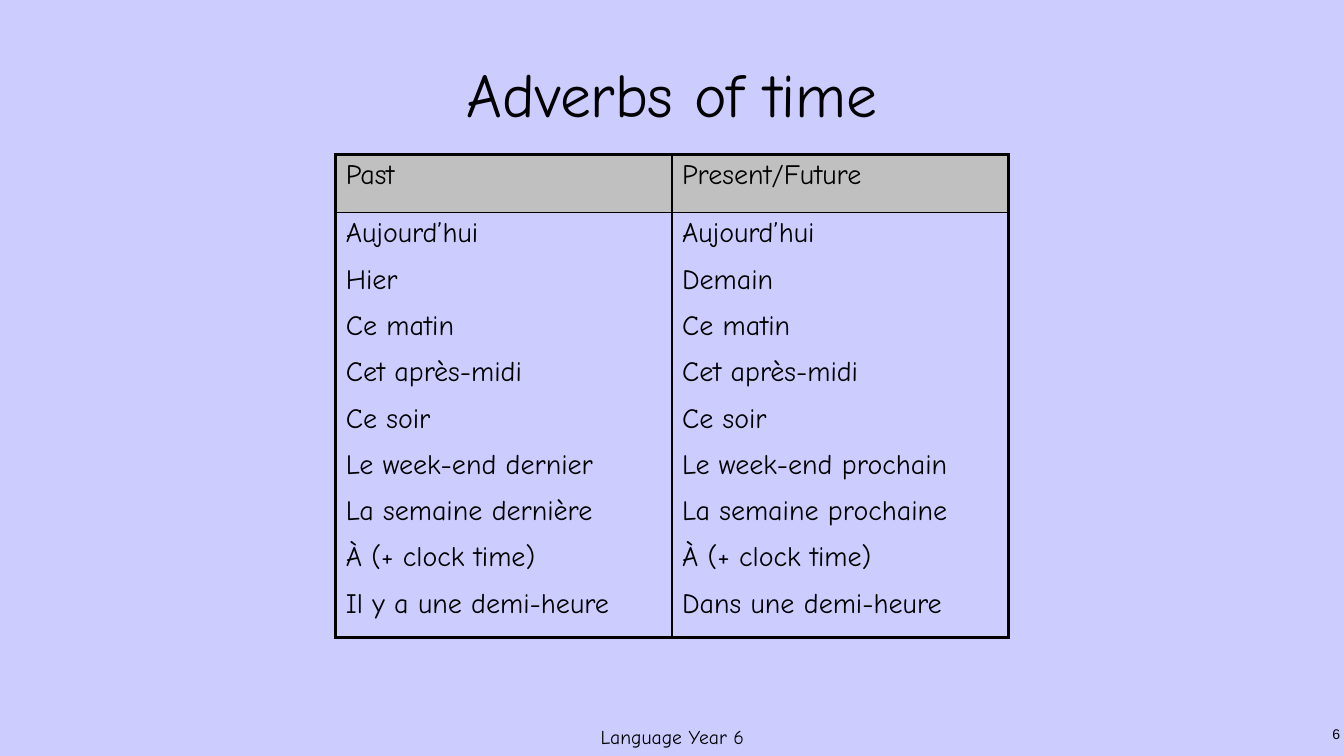
from pptx import Presentation
from pptx.dml.color import RGBColor
from pptx.enum.text import MSO_ANCHOR, PP_ALIGN
from pptx.oxml import parse_xml
from pptx.oxml.ns import nsdecls
from pptx.util import Inches, Pt

INK, HEADER_FILL, BACKGROUND = "000000", "C0C0C0", "CCCCFF"
BODY_FONT = "Comic Neue"
OUTER, INNER = 2.25, 1

ADVERBS = {
    "Past": [
        "Aujourd’hui", "Hier", "Ce matin", "Cet après-midi", "Ce soir",
        "Le week-end dernier", "La semaine dernière", "À (+ clock time)",
        "Il y a une demi-heure",
    ],
    "Present/Future": [
        "Aujourd’hui", "Demain", "Ce matin", "Cet après-midi", "Ce soir",
        "Le week-end prochain", "La semaine prochaine", "À (+ clock time)",
        "Dans une demi-heure",
    ],
}


def color(hex_string):
    return RGBColor.from_string(hex_string)


def style(p, size, font=BODY_FONT):
    for r in p.runs:
        r.font.size = Pt(size)
        r.font.name = font
        r.font.color.rgb = color(INK)


def add_text(s, box, text, size, align, anchor, font=BODY_FONT):
    tf = s.shapes.add_textbox(*map(Inches, box)).text_frame
    tf.word_wrap = True
    tf.vertical_anchor = anchor
    p = tf.paragraphs[0]
    p.text = text
    p.alignment = align
    style(p, size, font)
    return tf


def set_borders(cell, widths):
    """Draw the left, right, top and bottom borders, widths in points."""
    tcPr = cell._tc.get_or_add_tcPr()
    for i, (side, width) in enumerate(zip("LRTB", widths)):
        tcPr.insert(i, parse_xml(
            f'<a:ln{side} {nsdecls("a")} w="{Pt(width)}"><a:solidFill>'
            f'<a:srgbClr val="{INK}"/></a:solidFill></a:ln{side}>'))


def fill_cell(cell, lines):
    tf = cell.text_frame
    tf.text = "\n".join(lines)
    for i, p in enumerate(tf.paragraphs):
        p.space_before = Pt(10 if i else 0)
        style(p, 20)


def add_adverb_table(s, box, header_height):
    left, top, width, height = map(Inches, box)
    table = s.shapes.add_table(2, len(ADVERBS), left, top, width, height).table
    table.rows[0].height = Inches(header_height)
    table.rows[1].height = height - Inches(header_height)
    last = len(ADVERBS) - 1
    for col, (heading, adverbs) in enumerate(ADVERBS.items()):
        left_right = (INNER if col else OUTER, OUTER if col == last else INNER)
        header, body = table.cell(0, col), table.cell(1, col)
        fill_cell(header, [heading])
        header.fill.solid()
        header.fill.fore_color.rgb = color(HEADER_FILL)
        set_borders(header, (*left_right, OUTER, INNER))
        fill_cell(body, adverbs)
        body.fill.background()
        set_borders(body, (*left_right, INNER, OUTER))


def add_footer(s, box, number_box):
    tf = add_text(s, box, "Language Year 6", 14, PP_ALIGN.CENTER, MSO_ANCHOR.BOTTOM)
    tf.margin_bottom = 0
    add_text(s, number_box, "6", 10, PP_ALIGN.RIGHT, MSO_ANCHOR.TOP, "Arial")


def main():
    prs = Presentation()
    prs.slide_width, prs.slide_height = Inches(13.33), Inches(7.5)
    s = prs.slides.add_slide(prs.slide_layouts[6])
    s.background.fill.solid()
    s.background.fill.fore_color.rgb = color(BACKGROUND)
    add_footer(s, (4.56, 6.9, 4.22, 0.52), (10.28, 7.15, 3.11, 0.31))
    add_text(s, (0.67, 0.3, 12, 1.25), "Adverbs of time", 44,
             PP_ALIGN.CENTER, MSO_ANCHOR.MIDDLE)
    add_adverb_table(s, (3.33, 1.53, 6.67, 4.67), 0.58)
    prs.save("out.pptx")


if __name__ == "__main__":
    main()
